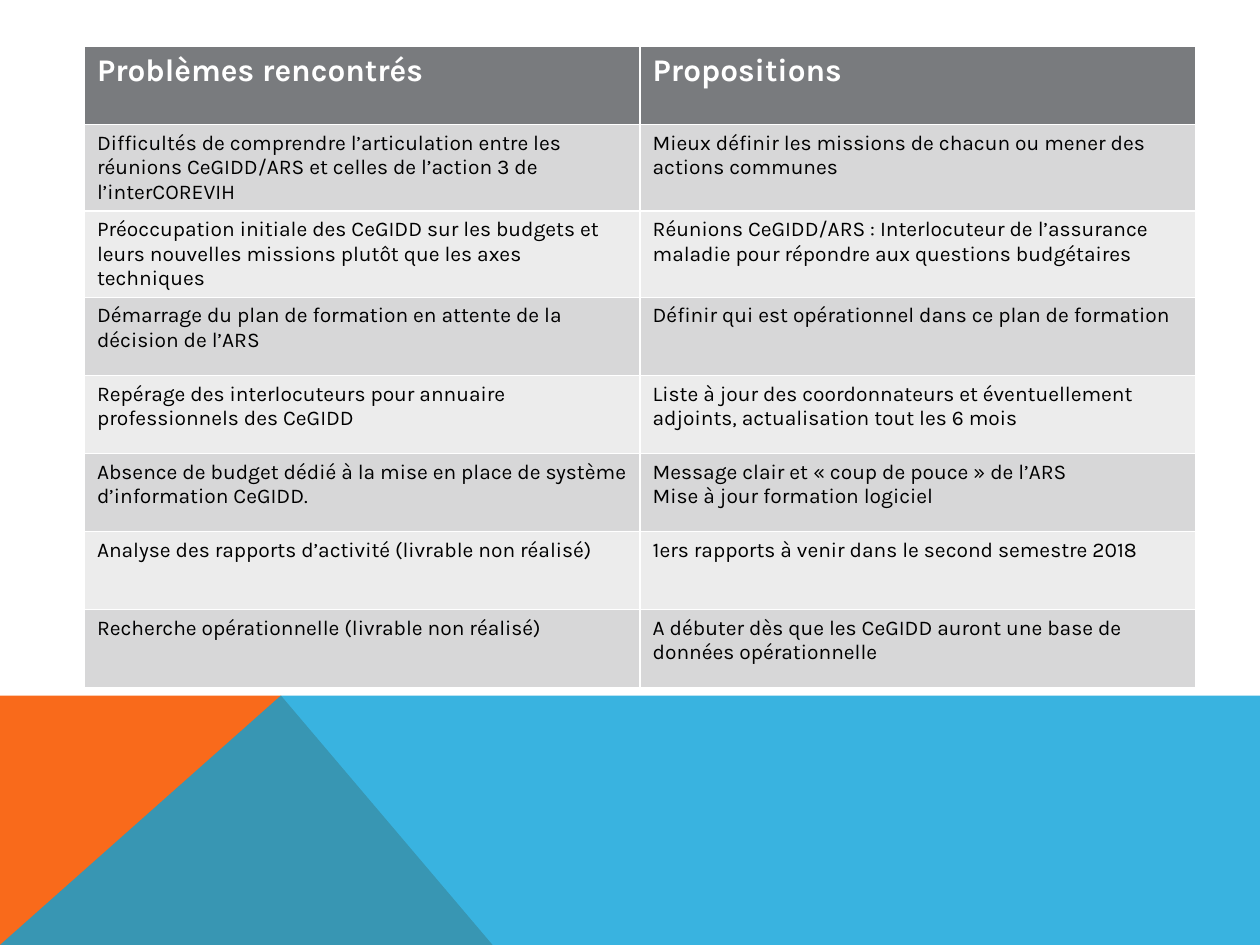
from lxml import etree
from pptx import Presentation, util as u
from pptx.dml.color import RGBColor
from pptx.oxml import ns

WHITE = RGBColor(0xFF, 0xFF, 0xFF)
BLACK = RGBColor(0x00, 0x00, 0x00)
HEADER_GREY = RGBColor(0x79, 0x7B, 0x7E)
DARK_BAND = RGBColor(0xD7, 0xD7, 0xD8)
LIGHT_BAND = RGBColor(0xEC, 0xEC, 0xEC)
ORANGE = RGBColor(0xF9, 0x6A, 0x1B)
BLUE = RGBColor(0x08, 0xA1, 0xD9)

deck = Presentation()
deck.slide_width, deck.slide_height = u.Inches(10), u.Inches(7.5)
slide = deck.slides.add_slide(deck.slide_layouts[6])

BOTTOM, HORIZON, PEAK = 7.5, 5.52, 2.23
footer_areas = [
    ([(0, BOTTOM), (0, HORIZON), (PEAK, HORIZON), (3.91, BOTTOM)], ORANGE, 100),
    ([(0, BOTTOM), (PEAK, HORIZON), (10, HORIZON), (10, BOTTOM)], BLUE, 80),
]
for corners, colour, opacity in footer_areas:
    points = [(u.Inches(x), u.Inches(y)) for x, y in corners]
    outline = slide.shapes.build_freeform(*points[0])
    outline.add_line_segments(points[1:], close=True)
    area = outline.convert_to_shape()
    area.shadow.inherit = False
    area.line.fill.background()
    area.fill.solid()
    area.fill.fore_color.rgb = colour
    if opacity < 100:
        tint = area.fill._xPr.find(".//" + ns.qn("a:srgbClr"))
        etree.SubElement(tint, ns.qn("a:alpha")).set("val", str(opacity * 1000))

findings = [
    ("Problèmes rencontrés", "Propositions"),
    ("Difficultés de comprendre l’articulation entre les réunions CeGIDD/ARS et celles de l’action 3 de l’interCOREVIH",
     "Mieux définir les missions de chacun ou mener des actions communes"),
    ("Préoccupation initiale des CeGIDD sur les budgets et leurs nouvelles missions plutôt que les axes techniques",
     "Réunions CeGIDD/ARS : Interlocuteur de l’assurance maladie pour répondre aux questions budgétaires"),
    ("Démarrage du plan de formation en attente de la décision de l’ARS",
     "Définir qui est opérationnel dans ce plan de formation"),
    ("Repérage des interlocuteurs pour annuaire professionnels des CeGIDD",
     "Liste à jour des coordonnateurs et éventuellement adjoints, actualisation tout les 6 mois"),
    ("Absence de budget dédié à la mise en place de système d’information CeGIDD.",
     "Message clair et « coup de pouce » de l’ARS\nMise à jour formation logiciel"),
    ("Analyse des rapports d’activité (livrable non réalisé)",
     "1ers rapports à venir dans le second semestre 2018"),
    ("Recherche opérationnelle (livrable non réalisé)",
     "A débuter dès que les CeGIDD auront une base de données opérationnelle"),
]
COLUMN, ROW = 4.41, 0.62
grid = slide.shapes.add_table(
    len(findings), 2, u.Inches(0.67), u.Inches(0.37),
    u.Inches(2 * COLUMN), u.Inches(len(findings) * ROW)).table

for row, entries in enumerate(findings):
    heading = row == 0
    band = HEADER_GREY if heading else DARK_BAND if row % 2 else LIGHT_BAND
    for column, entry in enumerate(entries):
        cell = grid.cell(row, column)
        cell.fill.solid()
        cell.fill.fore_color.rgb = band
        for index, sentence in enumerate(entry.split("\n")):
            frame = cell.text_frame
            paragraph = frame.add_paragraph() if index else frame.paragraphs[0]
            run = paragraph.add_run()
            run.text = sentence
            run.font.name = "Karla"
            run.font.size = u.Pt(18 if heading else 12)
            run.font.bold = heading
            run.font.color.rgb = WHITE if heading else BLACK

deck.save("out.pptx")
